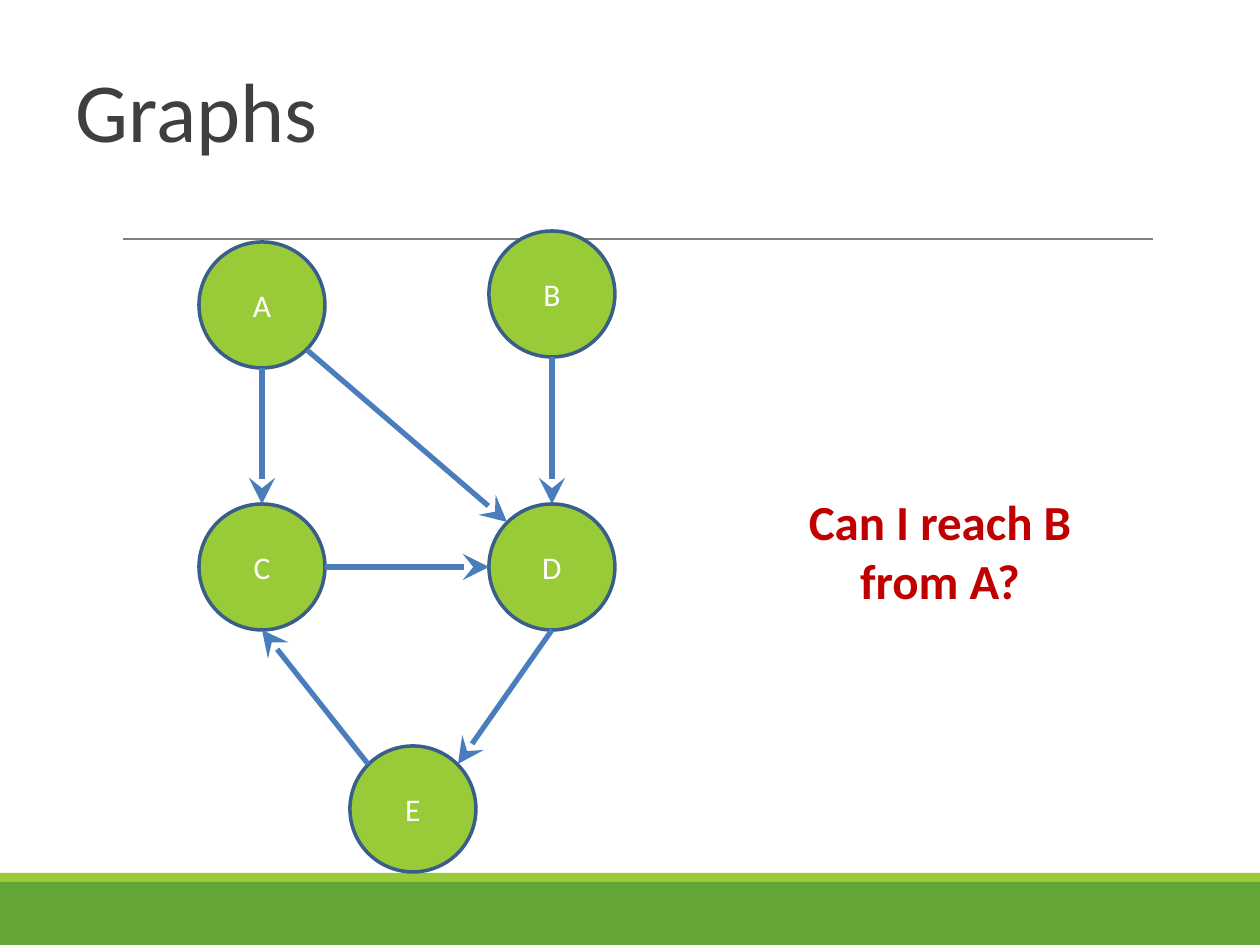
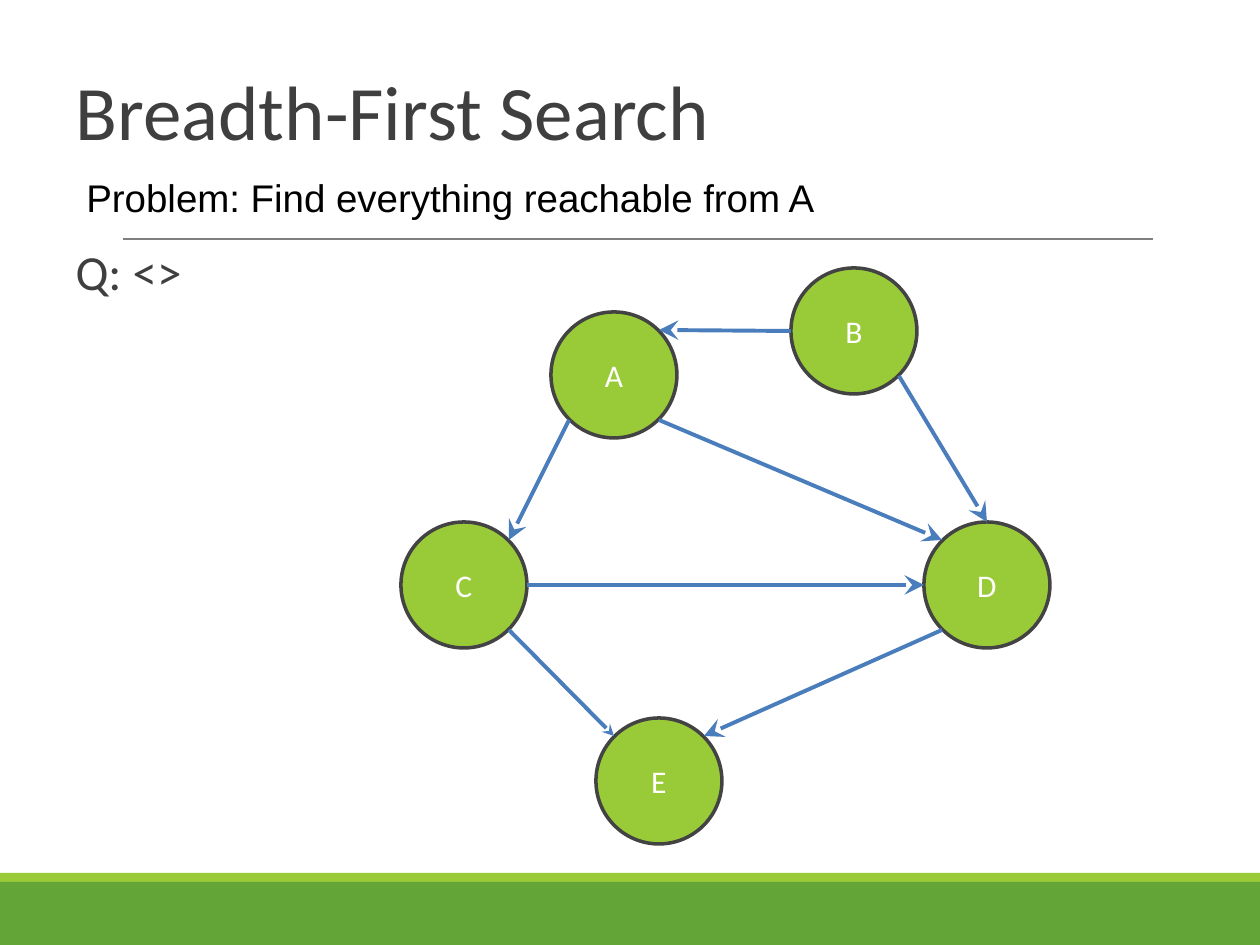
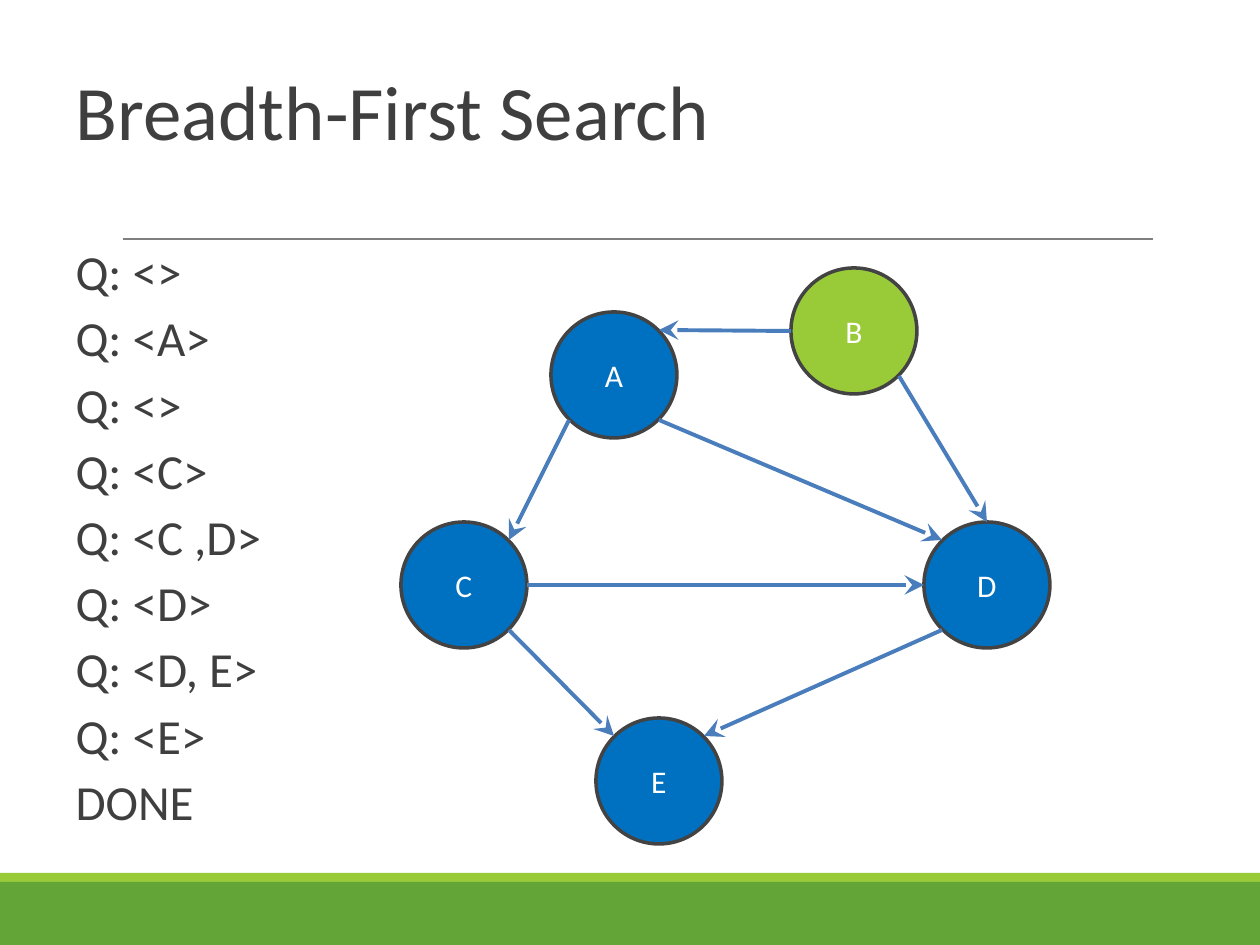
from dataclasses import dataclass

from lxml.etree import SubElement
from pptx import Presentation
from pptx.dml.color import RGBColor as Rgb
from pptx.enum.shapes import MSO_CONNECTOR as Connector, MSO_SHAPE as Shape
from pptx.enum.text import MSO_ANCHOR as Anchor, MSO_AUTO_SIZE as AutoSize, PP_ALIGN as Align
from pptx.oxml.ns import qn
from pptx.util import Pt

PX = 7257  # EMU in one px, 126 px to the inch


@dataclass(frozen=True)
class Theme:
    font: str = "Calibri"
    problem_font: str = "Arial"
    dark_green: Rgb = Rgb.from_string("63A537")
    green: Rgb = Rgb.from_string("99CB38")
    visited: Rgb = Rgb.from_string("0070C0")
    rule: Rgb = Rgb.from_string("7F7F7F")
    ink: Rgb = Rgb.from_string("3F3F3F")
    black: Rgb = Rgb.from_string("000000")
    white: Rgb = Rgb.from_string("FFFFFF")
    red: Rgb = Rgb.from_string("C00000")
    arrow: Rgb = Rgb.from_string("4A7DBB")
    blue_outline: Rgb = Rgb.from_string("395E8A")
    gray_outline: Rgb = Rgb.from_string("434343")
    body_size: int = 28
    problem_size: int = 22
    node_size: int = 18


THEME = Theme()
NODE = 126
DIAGONAL = 0.71
SITES = {
    "n": (0, -1), "ne": (DIAGONAL, -DIAGONAL), "e": (1, 0), "se": (DIAGONAL, DIAGONAL),
    "s": (0, 1), "sw": (-DIAGONAL, DIAGONAL), "w": (-1, 0), "nw": (-DIAGONAL, -DIAGONAL),
}


def style_text(frame, size, color, font=THEME.font, bold=False, align=Align.LEFT, spacing=1.0):
    frame.word_wrap = True
    frame.auto_size = AutoSize.NONE
    for paragraph in frame.paragraphs:
        paragraph.alignment = align
        paragraph.line_spacing = spacing
        for run in paragraph.runs:
            run.font.size = Pt(size)
            run.font.name = font
            run.font.bold = bold
            run.font.color.rgb = color


def add_line(slide, start, end, color, width, head=None):
    """Draw a straight line in px; head is the arrowhead size (med or lg) at its end."""
    x1, y1, x2, y2 = (round(value) * PX for value in (*start, *end))
    line = slide.shapes.add_connector(Connector.STRAIGHT, x1, y1, x2, y2)
    line.line.color.rgb = color
    line.line.width = Pt(width)
    if head:
        SubElement(line.line._get_or_add_ln(), qn("a:tailEnd"), type="stealth", w=head, len=head)
    SubElement(line.element.spPr, qn("a:effectLst"))
    return line


reach_graph = {
    "nodes": {"A": (199, 242), "B": (489, 231), "C": (199, 504), "D": (489, 504), "E": (350, 746)},
    "edges": ["A s C n", "A se D nw", "B s D n", "D s E ne", "E nw C s", "C e D w"],
    "outline": THEME.blue_outline,
    "arrow_width": 3,
}
search_graph = {
    "nodes": {"A": (551, 312), "B": (791, 268), "C": (401, 522), "D": (924, 522), "E": (596, 718)},
    "edges": ["A sw C ne", "A se D nw", "B se D n", "D sw E ne", "C se E nw", "C e D w", "B w A ne"],
    "outline": THEME.gray_outline,
    "arrow_width": 2.25,
}
contents = [
    {"title": "Graphs", "title_size": 48, "graph": reach_graph, "visited": "", "queue": []},
    {"title": "Breadth-First Search", "title_size": 44, "graph": search_graph, "visited": "",
     "queue": ["Q: <>"], "small_head": "C se E nw"},
    {"title": "Breadth-First Search", "title_size": 44, "graph": search_graph, "visited": "ACDE",
     "queue": ["Q: <>", "Q: <A>", "Q: <>", "Q: <C>", "Q: <C ,D>", "Q: <D>", "Q: <D, E>",
               "Q: <E>", "DONE"]},
]

prs = Presentation()
prs.slide_width, prs.slide_height = 1260 * PX, 945 * PX
title_and_content, title_only = prs.slide_layouts[1], prs.slide_layouts[5]

for content in contents:
    queue, graph = content["queue"], content["graph"]
    slide = prs.slides.add_slide(title_and_content if queue else title_only)

    title = slide.shapes.title
    title.left, title.top, title.width, title.height = 63 * PX, 38 * PX, 1134 * PX, 158 * PX
    title.text_frame.text = content["title"]
    title.text_frame.vertical_anchor = Anchor.MIDDLE
    style_text(title.text_frame, content["title_size"], THEME.ink, spacing=0.85)

    if queue:
        steps = slide.placeholders[1]
        steps.left, steps.top, steps.width, steps.height = 63 * PX, 242 * PX, 557 * PX, 602 * PX
        steps.text_frame.text = "\n".join(queue)
        style_text(steps.text_frame, THEME.body_size, THEME.ink, spacing=0.9)
        for number, step in enumerate(steps.text_frame.paragraphs):
            step.space_before = Pt(7.6 if number else 0)
            properties = step._p.get_or_add_pPr()
            properties.set("marL", "0")
            properties.set("indent", "0")
            SubElement(properties, qn("a:buNone"))

    for letter, (left, top) in graph["nodes"].items():
        node = slide.shapes.add_shape(Shape.OVAL, left * PX, top * PX, NODE * PX, NODE * PX)
        node.shadow.inherit = False
        node.fill.solid()
        node.fill.fore_color.rgb = THEME.visited if letter in content["visited"] else THEME.green
        node.line.color.rgb = graph["outline"]
        node.line.width = Pt(2)
        node.text_frame.text = letter
        node.text_frame.vertical_anchor = Anchor.MIDDLE
        style_text(node.text_frame, THEME.node_size, THEME.white, align=Align.CENTER)

    for edge in graph["edges"]:
        source, source_site, target, target_site = edge.split()
        start, end = (
            [corner + NODE / 2 * (1 + offset)
             for corner, offset in zip(graph["nodes"][letter], SITES[site])]
            for letter, site in ((source, source_site), (target, target_site))
        )
        head = "med" if edge == content.get("small_head") else "lg"
        add_line(slide, start, end, THEME.arrow, graph["arrow_width"], head)

graphs_slide, start_slide, _ = prs.slides

question = graphs_slide.shapes.add_textbox(756 * PX, 485 * PX, 368 * PX, 131 * PX)
question.text_frame.text = "Can I reach B from A?"
style_text(question.text_frame, THEME.body_size, THEME.red, bold=True, align=Align.CENTER)

problem = start_slide.shapes.add_textbox(74 * PX, 161 * PX, 974 * PX, 52 * PX)
problem.text_frame.text = "Problem: Find everything reachable from A"
problem.text_frame.margin_top = problem.text_frame.margin_bottom = 13 * PX
style_text(problem.text_frame, THEME.problem_size, THEME.black, THEME.problem_font)

# The bands and the rule are drawn once and moved to the master, behind its placeholders.
backdrop = [add_line(graphs_slide, (123, 239), (1153, 239), THEME.rule, 0.75)]
for top, height, color in ((882, 63, THEME.dark_green), (873, 9, THEME.green)):
    band = graphs_slide.shapes.add_shape(Shape.RECTANGLE, 0, top * PX, 1260 * PX, height * PX)
    band.shadow.inherit = False
    band.fill.solid()
    band.fill.fore_color.rgb = color
    band.line.fill.background()
    backdrop.append(band)
master_tree = prs.slide_master.element.cSld.spTree
for part in backdrop:
    master_tree.insert(2, part.element)

prs.save("out.pptx")
